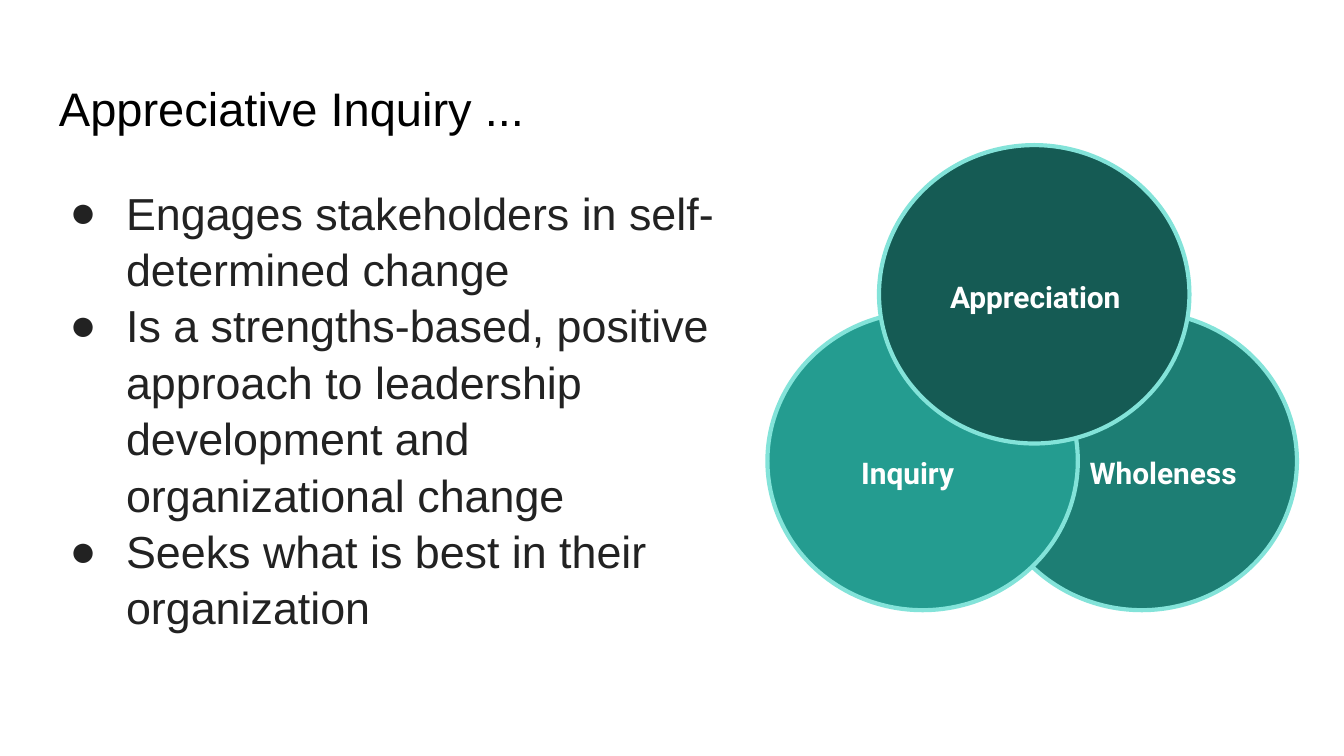
from dataclasses import dataclass

from lxml.etree import SubElement
from pptx import Presentation
from pptx.dml.color import RGBColor
from pptx.enum.shapes import MSO_SHAPE
from pptx.enum.text import MSO_ANCHOR
from pptx.oxml.ns import qn
from pptx.slide import Slide
from pptx.text.text import TextFrame, _Paragraph
from pptx.util import Inches, Pt

BLACK = RGBColor(0x00, 0x00, 0x00)
WHITE = RGBColor(0xFF, 0xFF, 0xFF)
INK = RGBColor(0x22, 0x22, 0x22)
RIM = RGBColor(0x83, 0xE3, 0xD9)
DARK_TEAL = RGBColor(0x15, 0x5B, 0x54)
MID_TEAL = RGBColor(0x1D, 0x7E, 0x74)
LIGHT_TEAL = RGBColor(0x24, 0x9C, 0x90)

PAGE_WIDTH = 10
PAGE_HEIGHT = PAGE_WIDTH * 9 / 16
CIRCLE_WIDTH, CIRCLE_HEIGHT = 2.31, 2.22
LABEL_HEIGHT = 0.63
MARGIN = 0.34

BULLETS = [
    "Engages stakeholders in self-determined change",
    "Is a strengths-based, positive approach to leadership development and organizational change",
    "Seeks what is best in their organization",
]


@dataclass(frozen=True)
class Circle:
    label: str
    left: float
    top: float
    fill: RGBColor
    label_left: float
    label_top: float
    label_width: float


# Back to front
CIRCLES = [
    Circle("Wholeness", 7.34, 2.32, MID_TEAL, 8.01, 3.18, 1.34),
    Circle("Inquiry", 5.71, 2.32, LIGHT_TEAL, 6.31, 3.18, 1.34),
    Circle("Appreciation", 6.54, 1.08, DARK_TEAL, 6.97, 1.87, 1.61),
]


def add_text_box(page: Slide, left: float, top: float, width: float, height: float) -> TextFrame:
    """Add a wrapping text box with equal insets and return its frame."""
    box = page.shapes.add_textbox(Inches(left), Inches(top), Inches(width), Inches(height))
    frame = box.text_frame
    frame.word_wrap = True
    frame.margin_left = frame.margin_right = Inches(0.1)
    frame.margin_top = frame.margin_bottom = Inches(0.1)
    return frame


def add_span(para: _Paragraph, text: str, size: float, font: str, color: RGBColor,
             bold: bool = False) -> None:
    span = para.add_run()
    span.text = text
    span.font.size = Pt(size)
    span.font.name = font
    span.font.bold = bold
    span.font.color.rgb = color


def set_bullet(para: _Paragraph) -> None:
    properties = para._p.get_or_add_pPr()
    properties.set("marL", str(Inches(0.5)))
    properties.set("indent", str(Inches(-0.42)))
    color = SubElement(properties, qn("a:buClr"))
    SubElement(color, qn("a:srgbClr"), val=str(INK))
    SubElement(properties, qn("a:buFont"), typeface="Arial")
    SubElement(properties, qn("a:buChar"), char="●")


def add_bullets(page: Slide) -> None:
    frame = add_text_box(page, MARGIN, 1.26, 5.36, 3.74)
    for index, text in enumerate(BULLETS):
        para = frame.add_paragraph() if index else frame.paragraphs[0]
        set_bullet(para)
        para.line_spacing = 1.05
        add_span(para, text, 24, "Arial", INK)


def add_circle(page: Slide, circle: Circle) -> None:
    shape = page.shapes.add_shape(
        MSO_SHAPE.OVAL, Inches(circle.left), Inches(circle.top),
        Inches(CIRCLE_WIDTH), Inches(CIRCLE_HEIGHT))
    shape.shadow.inherit = False
    shape.fill.solid()
    shape.fill.fore_color.rgb = circle.fill
    shape.line.color.rgb = RIM
    shape.line.width = Pt(2.25)

    frame = add_text_box(page, circle.label_left, circle.label_top,
                         circle.label_width, LABEL_HEIGHT)
    frame.vertical_anchor = MSO_ANCHOR.MIDDLE
    para = frame.paragraphs[0]
    para.line_spacing = 1.15
    add_span(para, circle.label, 16, "Roboto", WHITE, bold=True)


def main() -> None:
    deck = Presentation()
    deck.slide_width, deck.slide_height = Inches(PAGE_WIDTH), Inches(PAGE_HEIGHT)
    page = deck.slides.add_slide(deck.slide_layouts[6])

    title = add_text_box(page, MARGIN, 0.49, 9.32, 0.63)
    add_span(title.paragraphs[0], "Appreciative Inquiry ...", 25.2, "Arial", BLACK)
    add_bullets(page)
    for circle in CIRCLES:
        add_circle(page, circle)

    deck.save("out.pptx")


if __name__ == "__main__":
    main()
